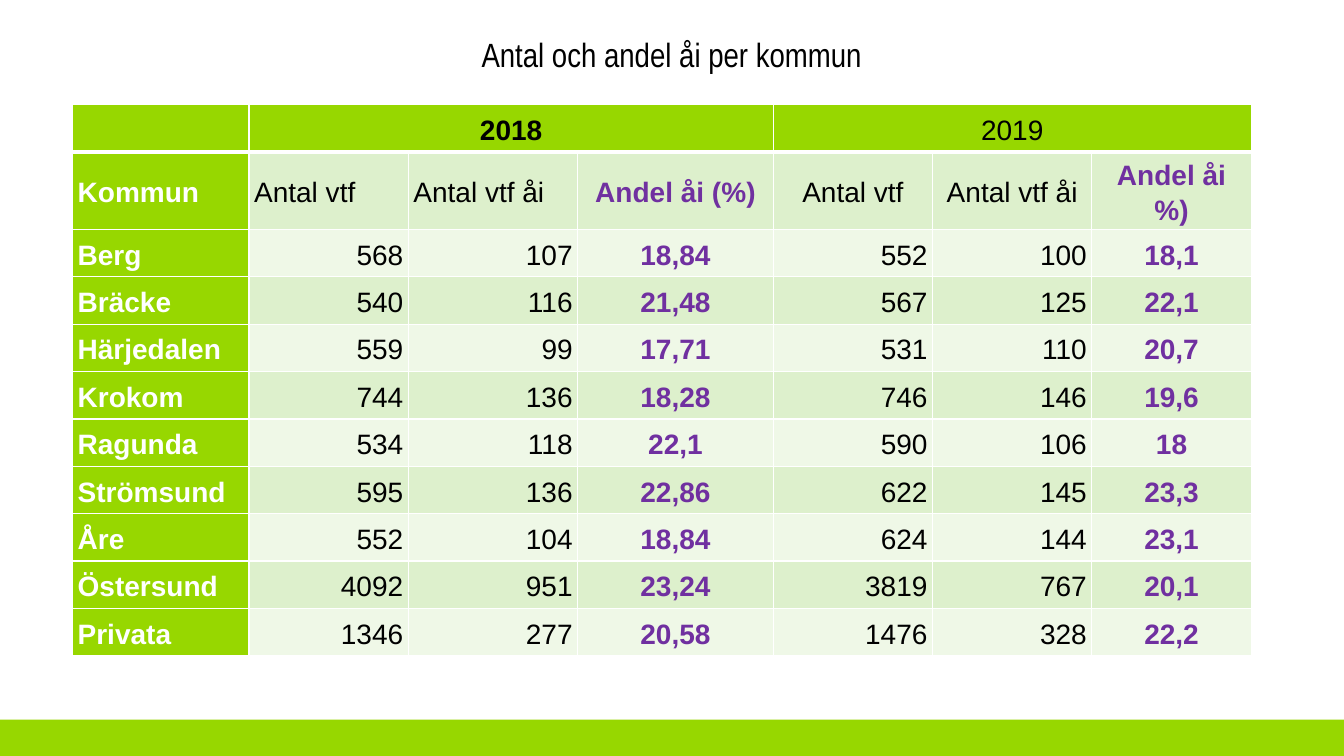
from lxml.etree import SubElement
from pptx import Presentation
from pptx.dml.color import RGBColor
from pptx.enum.shapes import MSO_SHAPE
from pptx.enum.text import MSO_ANCHOR, PP_ALIGN
from pptx.oxml.ns import qn
from pptx.util import Inches, Pt

COLORS = {
    "green": "97D700",
    "band": "DDF0CC",
    "pale": "EFF8E7",
    "purple": "7030A0",
    "white": "FFFFFF",
    "black": "000000",
}
LEFT, CENTER, RIGHT = PP_ALIGN.LEFT, PP_ALIGN.CENTER, PP_ALIGN.RIGHT


def write(frame, text, size=20, font="Arial", color="black", bold=False, align=LEFT, spacing=1.15):
    para = frame.paragraphs[0]
    para.alignment = align
    para.line_spacing = spacing
    span = para.add_run()
    span.text = text
    span.font.size = Pt(size)
    span.font.name = font
    span.font.bold = bold
    span.font.color.rgb = RGBColor.from_string(COLORS[color])


def paint(cell, fill, top=1, bottom=1):
    cell.fill.solid()
    cell.fill.fore_color.rgb = RGBColor.from_string(COLORS[fill])
    properties = cell._tc.get_or_add_tcPr()
    sides = [("a:lnL", 1), ("a:lnR", 1), ("a:lnT", top), ("a:lnB", bottom)]
    for index, (side, width) in enumerate(sides):
        line = SubElement(properties, qn(side), w=str(Pt(width)))
        solid = SubElement(line, qn("a:solidFill"))
        SubElement(solid, qn("a:srgbClr"), val=COLORS["white"])
        properties.insert(index, line)


deck = Presentation()
deck.slide_width = Inches(13.33)
deck.slide_height = Inches(7.5)
page = deck.slides.add_slide(deck.slide_layouts[6])

footer = page.shapes.add_shape(
    MSO_SHAPE.RECTANGLE, Inches(0), Inches(7.14), Inches(13.33), Inches(0.36)
)
footer.shadow.inherit = False
footer.fill.solid()
footer.fill.fore_color.rgb = RGBColor.from_string(COLORS["green"])
footer.line.fill.background()

title = page.shapes.add_textbox(Inches(0.94), Inches(0.33), Inches(11.44), Inches(0.71))
title.text_frame.word_wrap = True
write(title.text_frame, "Antal och andel åi per kommun", size=24, font="Arial Narrow",
      align=CENTER, spacing=0.9)

headings = ["Kommun", "Antal vtf", "Antal vtf åi", "Andel åi (%)",
            "Antal vtf", "Antal vtf åi", "Andel åi %)"]
municipalities = [
    ["Berg", "568", "107", "18,84", "552", "100", "18,1"],
    ["Bräcke", "540", "116", "21,48", "567", "125", "22,1"],
    ["Härjedalen", "559", "99", "17,71", "531", "110", "20,7"],
    ["Krokom", "744", "136", "18,28", "746", "146", "19,6"],
    ["Ragunda", "534", "118", "22,1", "590", "106", "18"],
    ["Strömsund", "595", "136", "22,86", "622", "145", "23,3"],
    ["Åre", "552", "104", "18,84", "624", "144", "23,1"],
    ["Östersund", "4092", "951", "23,24", "3819", "767", "20,1"],
    ["Privata", "1346", "277", "20,58", "1476", "328", "22,2"],
]
rows = [["", "2018", "", "", "2019", "", ""], headings] + municipalities
widths = [1.75, 1.58, 1.68, 1.94, 1.58, 1.58, 1.58]
heights = [0.47, 0.7] + [0.47] * len(municipalities)
heading_aligns = [LEFT, LEFT, LEFT, CENTER, CENTER, CENTER, CENTER]
number_aligns = [LEFT, RIGHT, RIGHT, CENTER, RIGHT, RIGHT, CENTER]
share_columns = (3, 6)

table = page.shapes.add_table(
    len(rows), len(widths), Inches(0.72), Inches(1.04), Inches(sum(widths)), Inches(sum(heights))
).table
for column, width in zip(table.columns, widths):
    column.width = Inches(width)
for row, height in zip(table.rows, heights):
    row.height = Inches(height)

for r, values in enumerate(rows):
    for c, value in enumerate(values):
        cell = table.cell(r, c)
        cell.vertical_anchor = MSO_ANCHOR.MIDDLE
        cell.margin_left = cell.margin_right = Inches(0.05)
        cell.margin_top = cell.margin_bottom = 0
        if r == 0 or c == 0:
            fill = "green"
        else:
            fill = "band" if r % 2 else "pale"
        paint(cell, fill, top=3 if r == 1 else 1, bottom=3 if r == 0 else 1)
        if not value:
            continue
        if r == 0:
            write(cell.text_frame, value, bold=value == "2018", align=CENTER)
            continue
        align = heading_aligns[c] if r == 1 else number_aligns[c]
        if c == 0:
            color = "white"
        else:
            color = "purple" if c in share_columns else "black"
        write(cell.text_frame, value, color=color, bold=color != "black", align=align)

for first in (1, 4):
    table.cell(0, first).merge(table.cell(0, first + 2))

deck.save("out.pptx")
